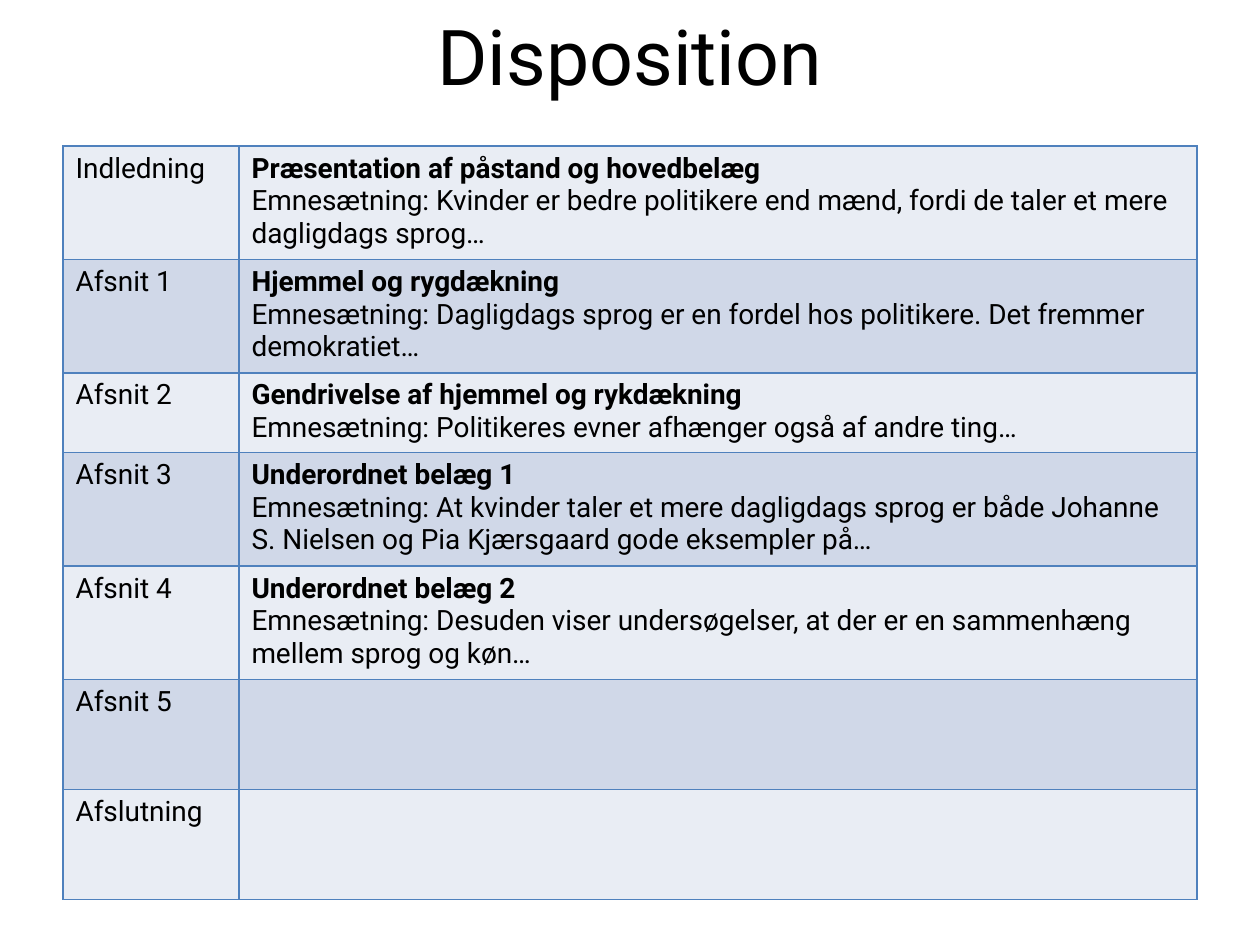
from dataclasses import dataclass

from lxml import etree
from pptx import Presentation
from pptx import util as u
from pptx.dml.color import RGBColor
from pptx.enum import text
from pptx.oxml.ns import qn

EMU_PER_PX = 914400 / 126
FONT = "Roboto"
BORDER = "4F81BD"
BANDS = ("E9EDF4", "D0D8E8")
LABEL_WIDTH, CONTENT_WIDTH = 176, 958
TABLE_LEFT, TABLE_TOP = 63, 146


@dataclass(frozen=True)
class Section:
    label: str
    heading: str = ""
    topic: str = ""
    height: int = 110


SECTIONS = [
    Section("Indledning", "Præsentation af påstand og hovedbelæg",
            "Kvinder er bedre politikere end mænd, fordi de taler et mere dagligdags sprog…"),
    Section("Afsnit 1", "Hjemmel og rygdækning",
            "Dagligdags sprog er en fordel hos politikere. Det fremmer demokratiet…"),
    Section("Afsnit 2", "Gendrivelse af hjemmel og rykdækning",
            "Politikeres evner afhænger også af andre ting…", height=78),
    Section("Afsnit 3", "Underordnet belæg 1",
            "At kvinder taler et mere dagligdags sprog er både Johanne S. Nielsen "
            "og Pia Kjærsgaard gode eksempler på…"),
    Section("Afsnit 4", "Underordnet belæg 2",
            "Desuden viser undersøgelser, at der er en sammenhæng mellem sprog og køn…"),
    Section("Afsnit 5"),
    Section("Afslutning"),
]


def px(length: int) -> u.Emu:
    return u.Emu(round(length * EMU_PER_PX))


def color(value: str) -> RGBColor:
    return RGBColor.from_string(value)


def write(para, words: str, *, size: int = 16, bold: bool = False,
          fill: str = "000000", align=text.PP_ALIGN.LEFT) -> None:
    para.alignment = align
    span = para.add_run()
    span.text = words
    span.font.name = FONT
    span.font.size = u.Pt(size)
    span.font.bold = bold
    span.font.color.rgb = color(fill)


def style_cell(cell, fill: str) -> None:
    cell.fill.solid()
    cell.fill.fore_color.rgb = color(fill)
    properties = cell._tc.get_or_add_tcPr()
    for index, side in enumerate(("lnL", "lnR", "lnT", "lnB")):
        line = etree.Element(qn(f"a:{side}"), w=str(u.Pt(1)))
        solid = etree.SubElement(line, qn("a:solidFill"))
        etree.SubElement(solid, qn("a:srgbClr"), val=BORDER)
        properties.insert(index, line)


def add_title(page, words: str) -> None:
    box = page.shapes.add_textbox(px(63), px(0), px(1134), px(110))
    frame = box.text_frame
    frame.word_wrap = True
    frame.vertical_anchor = text.MSO_ANCHOR.MIDDLE
    write(frame.paragraphs[0], words, size=44, align=text.PP_ALIGN.CENTER)


def add_outline(page, sections: list[Section]) -> None:
    height = sum(section.height for section in sections)
    table = page.shapes.add_table(
        len(sections), 2, px(TABLE_LEFT), px(TABLE_TOP),
        px(LABEL_WIDTH + CONTENT_WIDTH), px(height)).table
    table.first_row = False
    table.columns[0].width = px(LABEL_WIDTH)
    table.columns[1].width = px(CONTENT_WIDTH)
    for index, section in enumerate(sections):
        table.rows[index].height = px(section.height)
        label, content = table.cell(index, 0), table.cell(index, 1)
        for cell in (label, content):
            style_cell(cell, BANDS[index % 2])
        write(label.text_frame.paragraphs[0], section.label)
        if section.heading:
            frame = content.text_frame
            write(frame.paragraphs[0], section.heading, bold=True)
            write(frame.add_paragraph(), f"Emnesætning: {section.topic}")


def main() -> None:
    deck = Presentation()
    deck.slide_width, deck.slide_height = px(1260), px(945)
    page = deck.slides.add_slide(deck.slide_layouts[6])
    add_title(page, "Disposition")
    add_outline(page, SECTIONS)
    deck.save("out.pptx")


if __name__ == "__main__":
    main()
